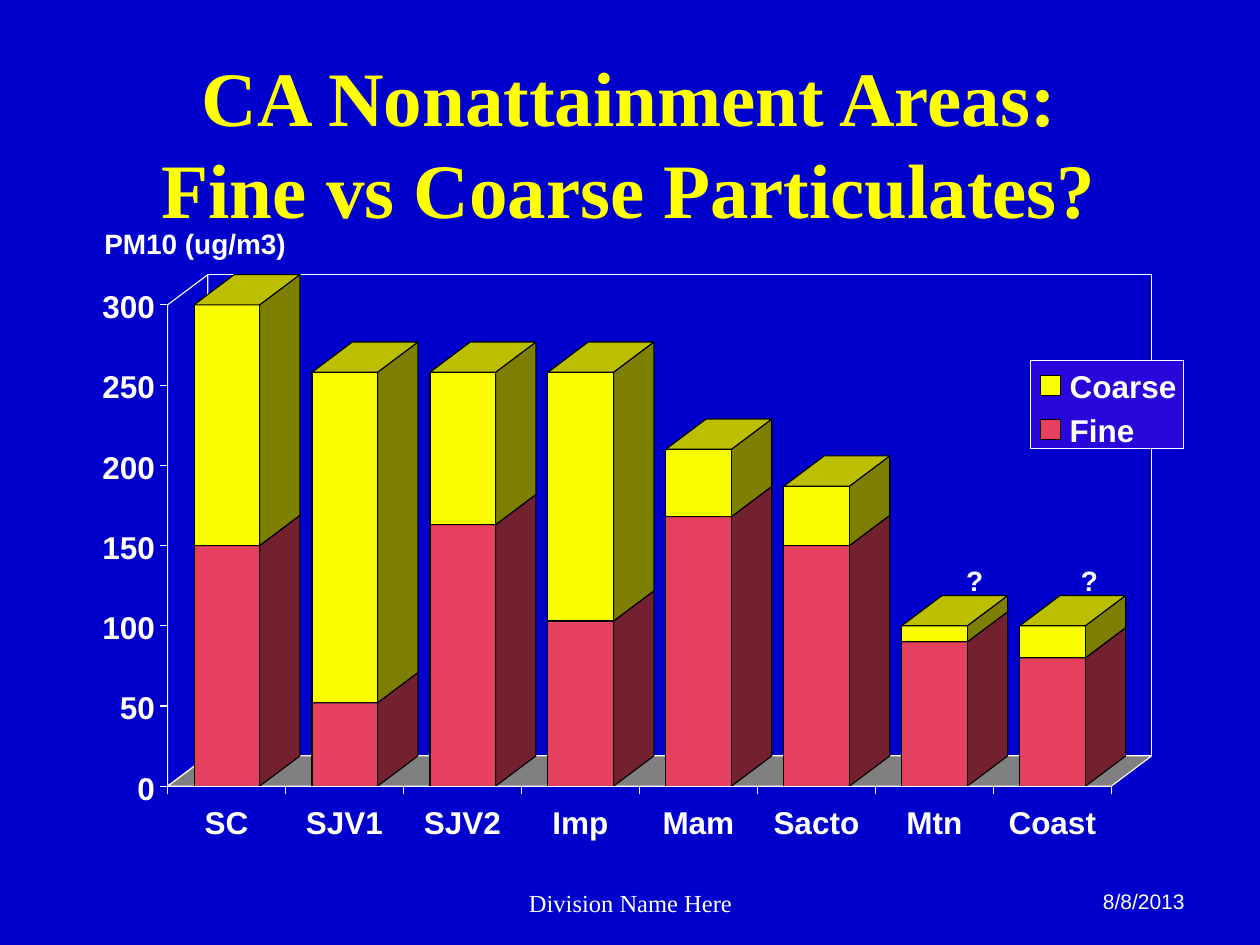
import pptx
import pptx.util
import pptx.dml.color
import pptx.enum.shapes
import pptx.enum.text
import pptx.oxml
import pptx.oxml.ns
from lxml import etree

Inches, Pt = pptx.util.Inches, pptx.util.Pt
ALIGN = pptx.enum.text.PP_ALIGN

COLORS = {
    "background": "0000CC", "title": "FFFF00", "white": "FFFFFF", "black": "000000",
    "floor": "808080", "legend": "2906DA",
}
SERIES = {
    "Fine": {"front": "E5405D", "side": "73202F", "top": "AC3046"},
    "Coarse": {"front": "FAFD00", "side": "7D7F00", "top": "BCBE00"},
}
# area, fine, coarse (ug/m3)
AREAS = [
    ("SC", 150, 150), ("SJV1", 52, 206), ("SJV2", 163, 95), ("Imp", 103, 155),
    ("Mam", 168, 42), ("Sacto", 150, 37), ("Mtn", 90, 10), ("Coast", 80, 20),
]
TITLE = "CA Nonattainment Areas: Fine vs Coarse Particulates?"
# text, left, top, width, height
NOTES = [
    ("PM10 (ug/m3)", 0.73, 1.75, 1.64, 0.36),
    ("?", 7.57, 4.42, 0.33, 0.36),
    ("?", 8.48, 4.42, 0.33, 0.36),
]

AXIS_MAX, AXIS_STEP = 300, 50
LEFT, RIGHT, TOP, BASE = 1.33, 8.82, 2.42, 6.24
DEPTH_X, DEPTH_Y = 0.32, 0.24
BAR_WIDTH, BAR_GAP = 0.52, 0.21
TICK = 0.06
LABEL_HEIGHT = 0.35
LINE_WIDTH = 0.63
PITCH = (RIGHT - LEFT) / len(AREAS)

prs = pptx.Presentation()
prs.slide_width, prs.slide_height = Inches(10), Inches(7.5)
slide = prs.slides.add_slide(prs.slide_layouts[6])


def rgb(name):
    return pptx.dml.color.RGBColor.from_string(COLORS.get(name, name))


def paint(shape, fill, line):
    shape.shadow.inherit = False
    if fill:
        shape.fill.solid()
        shape.fill.fore_color.rgb = rgb(fill)
    else:
        shape.fill.background()
    shape.line.color.rgb = rgb(line)
    shape.line.width = Pt(LINE_WIDTH)


def add_rect(left, top, width, height, fill, line):
    rect = slide.shapes.add_shape(
        pptx.enum.shapes.MSO_SHAPE.RECTANGLE,
        Inches(left), Inches(top), Inches(width), Inches(height))
    paint(rect, fill, line)


def add_polygon(points, fill, line):
    corners = [(Inches(x), Inches(y)) for x, y in points]
    builder = slide.shapes.build_freeform(*corners[0])
    builder.add_line_segments(corners[1:], close=True)
    paint(builder.convert_to_shape(), fill, line)


def add_line(x1, y1, x2, y2):
    line = slide.shapes.add_connector(
        pptx.enum.shapes.MSO_CONNECTOR.STRAIGHT,
        Inches(x1), Inches(y1), Inches(x2), Inches(y2))
    line.line.color.rgb = rgb("white")
    line.line.width = Pt(LINE_WIDTH)
    etree.SubElement(line._element.spPr, pptx.oxml.ns.qn("a:effectLst"))


def add_text(text, left, top, width, height, size=18, font="Arial", color="white",
             bold=True, align=ALIGN.LEFT, inset=True, wrap=True):
    box = slide.shapes.add_textbox(Inches(left), Inches(top), Inches(width), Inches(height))
    frame = box.text_frame
    frame.word_wrap = wrap
    if not inset:
        frame.margin_left = frame.margin_right = frame.margin_top = frame.margin_bottom = 0
    paragraph = frame.paragraphs[0]
    paragraph.text = text
    paragraph.alignment = align
    paragraph.font.size, paragraph.font.name = Pt(size), font
    paragraph.font.bold = bold
    paragraph.font.color.rgb = rgb(color)
    return frame


def y_of(value):
    return BASE - value / AXIS_MAX * (BASE - TOP)


def add_block(left, low, high, faces):
    """Draw one stacked 3-D block between two axis values."""
    right, bottom, top = left + BAR_WIDTH, y_of(low), y_of(high)
    add_polygon([(right, bottom), (right, top), (right + DEPTH_X, top - DEPTH_Y),
                 (right + DEPTH_X, bottom - DEPTH_Y)], faces["side"], "black")
    add_rect(left, top, BAR_WIDTH, bottom - top, faces["front"], "black")
    add_polygon([(right, top), (right + DEPTH_X, top - DEPTH_Y),
                 (left + DEPTH_X, top - DEPTH_Y), (left, top)], faces["top"], "black")


slide.background.fill.solid()
slide.background.fill.fore_color.rgb = rgb("background")

add_text("8/8/2013", 7.42, 7, 2.08, 0.5, size=12, bold=False, align=ALIGN.RIGHT)
add_text("Division Name Here", 3.42, 7, 3.17, 0.5, size=14, font="Times New Roman",
         bold=False, align=ALIGN.CENTER)

# Floor, side wall and back wall
add_polygon([(LEFT, BASE), (LEFT + DEPTH_X, BASE - DEPTH_Y),
             (RIGHT + DEPTH_X, BASE - DEPTH_Y), (RIGHT, BASE)], "floor", "white")
add_polygon([(LEFT, BASE), (LEFT, TOP), (LEFT + DEPTH_X, TOP - DEPTH_Y),
             (LEFT + DEPTH_X, BASE - DEPTH_Y)], None, "white")
add_rect(LEFT + DEPTH_X, TOP - DEPTH_Y, RIGHT - LEFT, BASE - TOP, None, "white")

for i, (area, fine, coarse) in enumerate(AREAS):
    bar_left = LEFT + i * PITCH + BAR_GAP
    add_block(bar_left, 0, fine, SERIES["Fine"])
    add_block(bar_left, fine, fine + coarse, SERIES["Coarse"])

# Value axis
add_line(LEFT, BASE, LEFT, TOP)
for value in range(0, AXIS_MAX + 1, AXIS_STEP):
    y = y_of(value)
    add_line(LEFT, y, LEFT - TICK, y)
    add_text(str(value), 0.7, y - 0.14, 0.53, LABEL_HEIGHT, align=ALIGN.RIGHT, inset=False)

# Category axis
add_line(LEFT, BASE, RIGHT, BASE)
for i in range(len(AREAS) + 1):
    x = LEFT + i * PITCH
    add_line(x, BASE, x, BASE + TICK)
for i, (area, fine, coarse) in enumerate(AREAS):
    add_text(area, LEFT + i * PITCH, 6.37, PITCH, LABEL_HEIGHT,
             align=ALIGN.CENTER, inset=False)

# Legend
add_rect(8.18, 2.86, 1.21, 0.7, "legend", "white")
for row, name in enumerate(("Coarse", "Fine")):
    y = 2.91 + row * LABEL_HEIGHT
    add_rect(8.26, y + 0.07, 0.16, 0.16, SERIES[name]["front"], "black")
    add_text(name, 8.49, y, 0.97, LABEL_HEIGHT, inset=False, wrap=False)

title = add_text(TITLE, 1.08, 0.5, 7.83, 1.25, size=44, font="Times New Roman",
                 color="title", align=ALIGN.CENTER)
title.vertical_anchor = pptx.enum.text.MSO_ANCHOR.MIDDLE
title.paragraphs[0].runs[0]._r.get_or_add_rPr().append(pptx.oxml.parse_xml(
    f'<a:effectLst {pptx.oxml.ns.nsdecls("a")}>'
    '<a:outerShdw blurRad="38100" dist="38100" dir="2700000" algn="tl">'
    f'<a:srgbClr val="{COLORS["black"]}"/></a:outerShdw></a:effectLst>'))

for text, *place in NOTES:
    add_text(text, *place, size=16, wrap=False)

prs.save("out.pptx")
